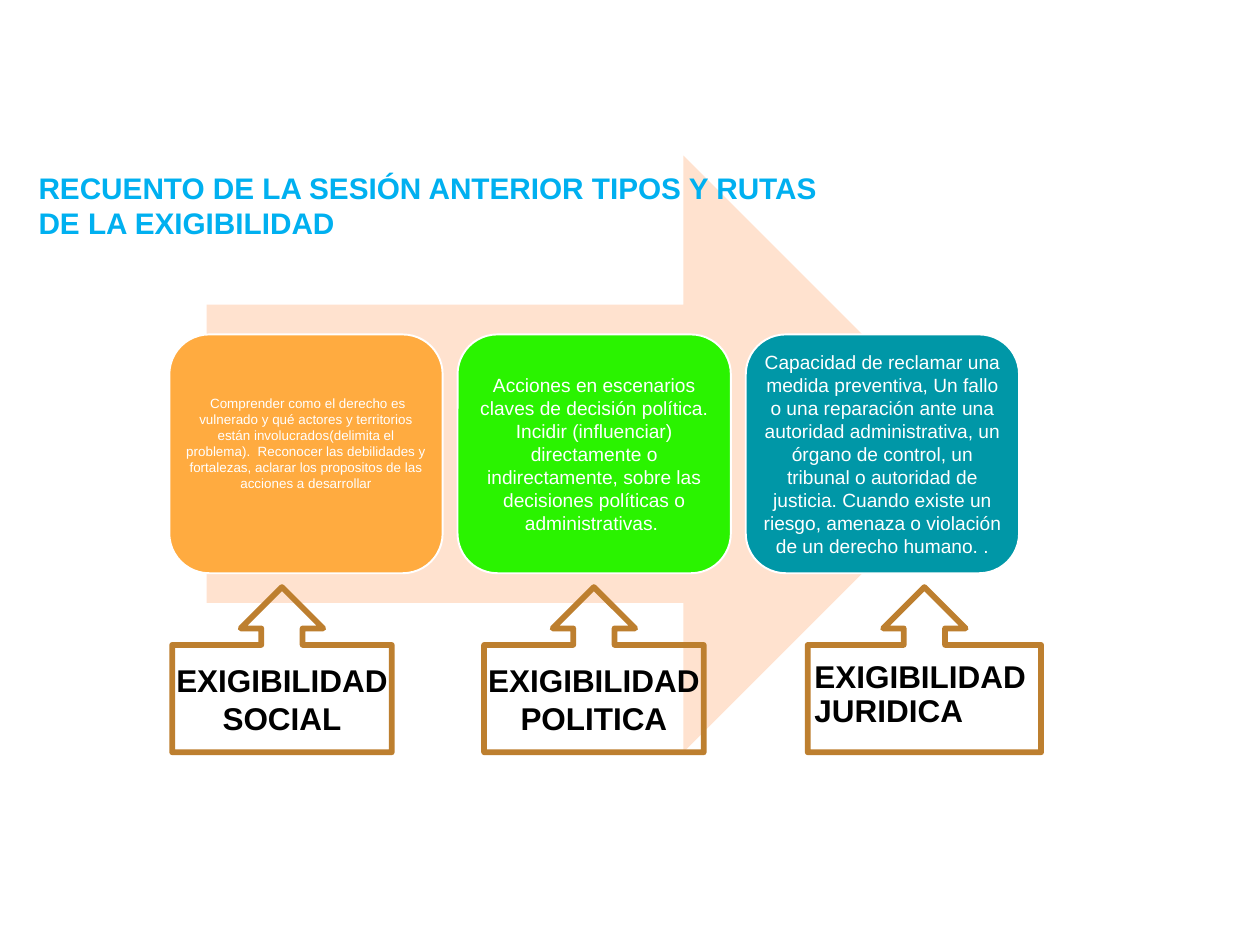
from lxml import etree
from pptx import Presentation
from pptx.dml.color import RGBColor
from pptx.enum import shapes as kinds, text as txt
from pptx.util import Pt

HUES = {
    "title": "00B0F0", "arrow": "FFE2CF", "frame": "BD7F2F",
    "white": "FFFFFF", "black": "000000",
    "orange": "FFAB40", "green": "2AF300", "teal": "0097A7",
}
TITLE = "RECUENTO DE LA SESIÓN ANTERIOR TIPOS Y RUTAS DE LA EXIGIBILIDAD"

# Cards: text, fill, size, inset, bottom inset
CARDS = [
    (" Comprender como el derecho es vulnerado y qué actores y territorios "
     "están involucrados(delimita el problema).  Reconocer las debilidades y "
     "fortalezas, aclarar los propositos de las acciones a desarrollar",
     "orange", 14, 4.3, 26),
    ("Acciones en escenarios claves de decisión política. Incidir "
     "(influenciar) directamente o indirectamente, sobre las decisiones "
     "políticas o administrativas. ", "green", 20, 5.8, 5.8),
    ("Capacidad de reclamar una medida preventiva, Un fallo o una reparación "
     "ante una autoridad administrativa, un órgano de control, un tribunal o "
     "autoridad de justicia. Cuando existe un riesgo, amenaza o violación de "
     "un derecho humano. .", "teal", 20, 5.8, 5.8),
]

# Callouts: text, left, width, side overhang of the label, alignment, spacing
ALIGN = txt.PP_ALIGN
CALLS = [
    ("EXIGIBILIDAD SOCIAL", 180, 229.7, 8.4, ALIGN.CENTER, None),
    ("EXIGIBILIDAD POLITICA", 506.2, 229.7, 8.4, ALIGN.CENTER, None),
    ("EXIGIBILIDAD JURIDICA ", 844.6, 244.1, 0, ALIGN.JUSTIFY, 0.9),
]
CARD_X, CARD_Y, CARD_W, CARD_H, CARD_STEP = 177.1, 349.9, 285.8, 249.8, 301.4
CALL_Y, CALL_H, LABEL_Y, LABEL_H = 614.2, 172.8, 684.7, 87

deck = Presentation()
deck.slide_width, deck.slide_height = Pt(1317.6), Pt(988.6)
slide = deck.slides.add_slide(deck.slide_layouts[5])
parts = slide.shapes


def color(name):
    return RGBColor.from_string(HUES[name])


def write(shape, words, size, hue, bold=False, align=ALIGN.LEFT,
          anchor=txt.MSO_ANCHOR.TOP, inset=7.2, bottom=None, space=None):
    frame = shape.text_frame
    frame.word_wrap = True
    frame.auto_size = txt.MSO_AUTO_SIZE.NONE
    frame.vertical_anchor = anchor
    frame.margin_left = frame.margin_right = frame.margin_top = Pt(inset)
    frame.margin_bottom = Pt(inset if bottom is None else bottom)
    frame.text = words
    para = frame.paragraphs[0]
    para.alignment = align
    para.line_spacing = space
    font = para.runs[0].font
    font.name, font.size, font.bold = "Arial", Pt(size), bold
    font.color.rgb = color(hue)


def draw(kind, x, y, w, h, fill=None, line=None, width=0):
    shape = parts.add_shape(kind, Pt(x), Pt(y), Pt(w), Pt(h))
    shape.shadow.inherit = False
    if fill:
        shape.fill.solid()
        shape.fill.fore_color.rgb = color(fill)
    else:
        shape.fill.background()
    if line:
        shape.line.color.rgb = color(line)
        shape.line.width = Pt(width)
        # Rounded corners on the outline
        ns = "{http://schemas.openxmlformats.org/drawingml/2006/main}"
        etree.SubElement(shape.line._get_or_add_ln(), ns + "round")
    else:
        shape.line.fill.background()
    return shape


# Large arrow behind the cards
KIND = kinds.MSO_SHAPE
draw(KIND.RIGHT_ARROW, 216, 162.7, 810.7, 624.2, "arrow")

# Cards
for i, (words, fill, size, inset, bottom) in enumerate(CARDS):
    card = draw(KIND.ROUNDED_RECTANGLE, CARD_X + i * CARD_STEP, CARD_Y,
                CARD_W, CARD_H, fill, "white", 2)
    write(card, words, size, "white", align=ALIGN.CENTER,
          anchor=txt.MSO_ANCHOR.MIDDLE, inset=inset, bottom=bottom)

# Callouts and their labels
for words, x, w, over, align, space in CALLS:
    draw(KIND.UP_ARROW_CALLOUT, x, CALL_Y, w, CALL_H, line="frame", width=6)
    label = parts.add_textbox(Pt(x - over), Pt(LABEL_Y),
                              Pt(w + 2 * over), Pt(LABEL_H))
    write(label, words, 32.9, "black", bold=True, align=align, space=space)

# Title, in front of the arrow
title = parts.title
title.left, title.top = Pt(25.9), Pt(162.7)
title.width, title.height = Pt(892.1), Pt(132.5)
write(title, TITLE, 31.1, "title", bold=True, inset=14.4)
parts.element.append(title.element)

deck.save("out.pptx")
